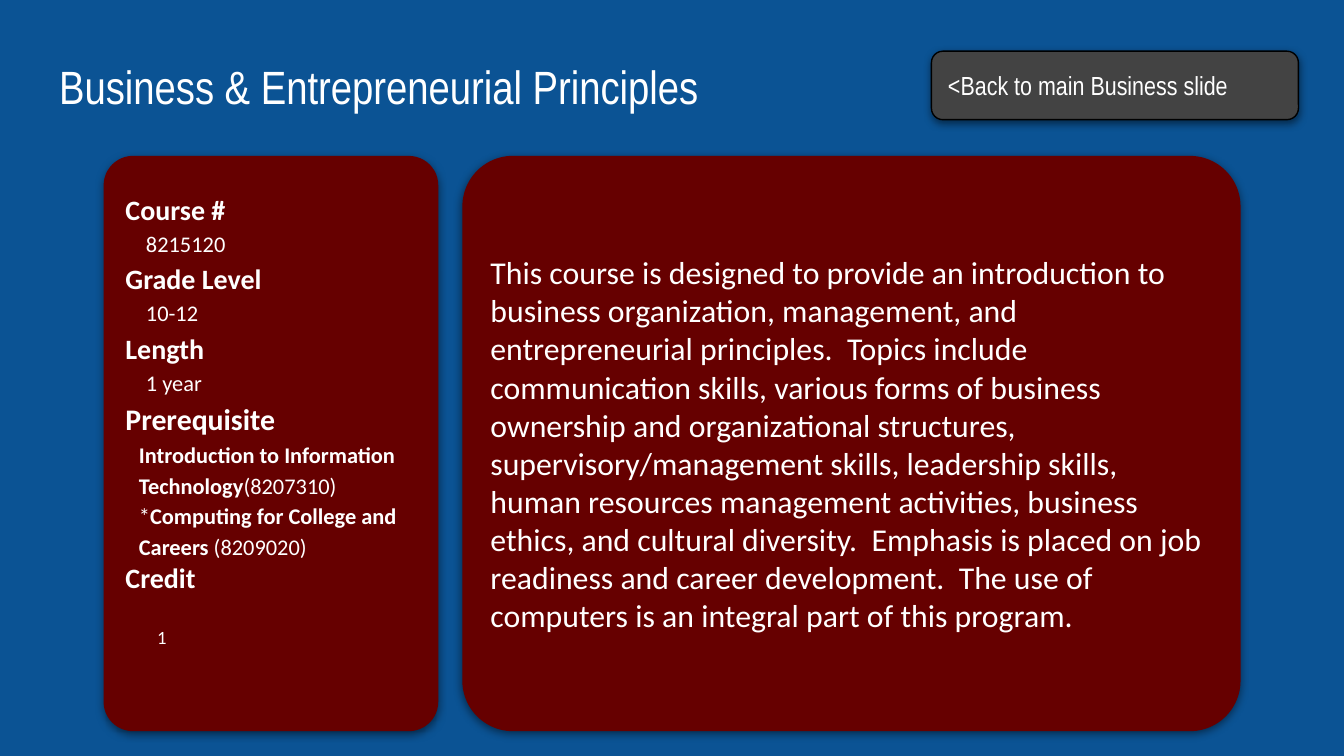
import pptx
import pptx.util
import pptx.dml.color
import pptx.enum.shapes
import pptx.enum.text
import pptx.oxml
import pptx.oxml.ns

Pt = pptx.util.Pt
ANCHOR = pptx.enum.text.MSO_ANCHOR

BLUE, MAROON, GREY = "0B5394", "660000", "434343"
WHITE, BLACK = "FFFFFF", "000000"
INSET = 7.2
PANEL_TOP, PANEL_HEIGHT = 83.5, 308.2

DESCRIPTION = (
    "This course is designed to provide an introduction to business organization, "
    "management, and entrepreneurial principles.  Topics include communication skills, "
    "various forms of business ownership and organizational structures, "
    "supervisory/management skills, leadership skills, human resources management "
    "activities, business ethics, and cultural diversity.  Emphasis is placed on job "
    "readiness and career development.  The use of computers is an integral part of "
    "this program."
)


def rgb(value):
    return pptx.dml.color.RGBColor.from_string(value)


def add_text(p, text, size=12, bold=False, font="Calibri", color=WHITE):
    r = p.add_run()
    r.text = text
    r.font.size = Pt(size)
    r.font.bold = bold
    r.font.name = font
    r.font.color.rgb = rgb(color)


def format_paragraph(p, indent=0, spacing=1.0, before=0):
    p.alignment = pptx.enum.text.PP_ALIGN.LEFT
    p.line_spacing = spacing
    p.space_before = Pt(before)
    pPr = p._p.get_or_add_pPr()
    pPr.set("marL", str(Pt(indent)))
    pPr.set("indent", "0")


def format_frame(tf, anchor, bottom=INSET):
    tf.word_wrap = True
    tf.auto_size = pptx.enum.text.MSO_AUTO_SIZE.NONE
    tf.vertical_anchor = anchor
    tf.margin_left = tf.margin_top = tf.margin_right = Pt(INSET)
    tf.margin_bottom = Pt(bottom)


def add_shadow(sp):
    """Soft black shadow falling straight down."""
    sp.shadow.inherit = False
    effects = sp._element.spPr.find(pptx.oxml.ns.qn("a:effectLst"))
    effects.append(pptx.oxml.parse_xml(
        f'<a:outerShdw {pptx.oxml.ns.nsdecls("a")} blurRad="{Pt(4.5)}" '
        f'dist="{Pt(1.5)}" dir="5400000" algn="bl" rotWithShape="0">'
        f'<a:srgbClr val="{BLACK}"><a:alpha val="50000"/></a:srgbClr></a:outerShdw>'))


def add_rounded_box(s, left, top, width, height, fill, radius, line=None, bottom=INSET):
    sp = s.shapes.add_shape(pptx.enum.shapes.MSO_SHAPE.ROUNDED_RECTANGLE,
                            Pt(left), Pt(top), Pt(width), Pt(height))
    sp.adjustments[0] = radius
    sp.fill.solid()
    sp.fill.fore_color.rgb = rgb(fill)
    if line:
        sp.line.color.rgb = rgb(line)
        sp.line.width = Pt(0.75)
    else:
        sp.line.fill.background()
    add_shadow(sp)
    format_frame(sp.text_frame, ANCHOR.MIDDLE, bottom)
    return sp.text_frame


def add_title(s, text):
    sp = s.shapes.title
    sp.left, sp.top, sp.width, sp.height = Pt(24.5), Pt(23), Pt(671), Pt(45.4)
    format_frame(sp.text_frame, ANCHOR.BOTTOM)
    p = sp.text_frame.paragraphs[0]
    format_paragraph(p)
    add_text(p, text, size=25, font="Arial Narrow")


def add_course_facts(s):
    tf = add_rounded_box(s, 55.5, PANEL_TOP, 179.3, PANEL_HEIGHT, MAROON, 0.088, bottom=35)
    p = tf.paragraphs[0]
    for label, value in (("Course #", "8215120"), ("Grade Level", "10-12"),
                         ("Length", "1 year")):
        format_paragraph(p, spacing=1.15)
        add_text(p, label, size=15, bold=True)
        p = tf.add_paragraph()
        format_paragraph(p, indent=11, spacing=1.15)
        add_text(p, value)
        p = tf.add_paragraph()

    format_paragraph(p, spacing=1.15)
    add_text(p, "Prerequisite", size=16, bold=True)
    p = tf.add_paragraph()
    format_paragraph(p, indent=INSET, spacing=1.15)
    add_text(p, "Introduction to Information Technology", bold=True)
    add_text(p, "(8207310) *")
    add_text(p, "Computing for College and Careers", bold=True)
    add_text(p, " (8209020)")

    p = tf.add_paragraph()
    format_paragraph(p)
    add_text(p, "Credit", size=15, bold=True)
    p = tf.add_paragraph()
    format_paragraph(p, indent=17, before=17)
    add_text(p, "1", size=10)


def add_description(s):
    tf = add_rounded_box(s, 247.7, PANEL_TOP, 416.9, PANEL_HEIGHT, MAROON, 0.088)
    format_paragraph(tf.paragraphs[0])
    add_text(tf.paragraphs[0], DESCRIPTION, size=17)


def add_back_button(s):
    tf = add_rounded_box(s, 499, 27.4, 196.6, 36.7, GREY, 0.167, line=BLACK)
    format_paragraph(tf.paragraphs[0])
    add_text(tf.paragraphs[0], "<Back to main Business slide", size=14, font="Arial Narrow")


def main():
    prs = pptx.Presentation()
    prs.slide_width, prs.slide_height = Pt(720), Pt(405)
    s = prs.slides.add_slide(prs.slide_layouts[5])
    s.background.fill.solid()
    s.background.fill.fore_color.rgb = rgb(BLUE)
    add_title(s, "Business & Entrepreneurial Principles")
    add_course_facts(s)
    add_description(s)
    add_back_button(s)
    prs.save("out.pptx")


if __name__ == "__main__":
    main()
